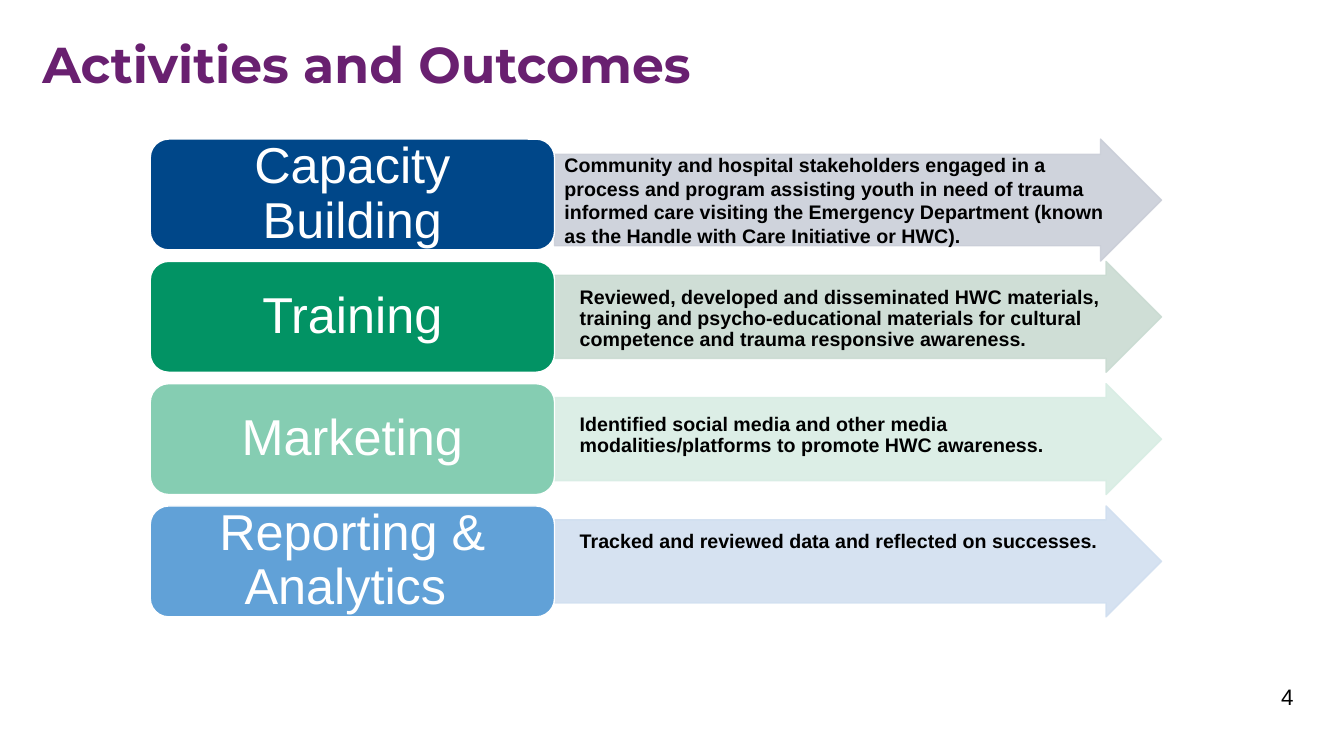
from dataclasses import dataclass

from lxml.etree import SubElement
from pptx import Presentation
from pptx.dml.color import RGBColor
from pptx.enum.shapes import MSO_SHAPE
from pptx.enum.text import MSO_ANCHOR, MSO_AUTO_SIZE, PP_ALIGN
from pptx.oxml import parse_xml
from pptx.oxml.ns import nsdecls, qn
from pptx.util import Pt

TITLE = "Activities and Outcomes"
PAGE_NUMBER = "4"

# activity, outcome, activity colour, outcome colour
ACTIVITIES = [
    ("Capacity Building",
     "Community and hospital stakeholders engaged in a process and program "
     "assisting youth in need of trauma informed care visiting the Emergency "
     "Department (known as the Handle with Care Initiative or HWC).",
     "004789", "CACED8"),
    ("Training",
     "Reviewed, developed and disseminated HWC materials, training and "
     "psycho-educational materials for cultural competence and trauma "
     "responsive awareness.",
     "029364", "CADBD2"),
    ("Marketing",
     "Identified social media and other media modalities/platforms to promote "
     "HWC awareness.",
     "85CDB2", "D8EDE4"),
    ("Reporting & Analytics ",
     "Tracked and reviewed data and reflected on successes.",
     "61A1D7", "D1DFF0"),
]

# arrow height, (left, top, right, bottom) margins, anchor, line spacing
ARROW_LAYOUT = [
    (121, (10, 10, 10, 10), MSO_ANCHOR.MIDDLE, 1.0),
    (110, (25, 12, 0, 0), MSO_ANCHOR.TOP, 0.9),
    (110, (25, 17, 0, 0), MSO_ANCHOR.TOP, 0.9),
    (110, (25, 12, 0, 0), MSO_ANCHOR.TOP, 0.9),
]


@dataclass(frozen=True)
class Theme:
    heading_font: str = "Montserrat"
    body_font: str = "Arial"
    purple: str = "692070"
    white: str = "FFFFFF"
    black: str = "000000"
    large: int = 36
    number: int = 16
    small: int = 14
    arrow_opacity: int = 89


THEME = Theme()
EMU_PER_PX = 9144  # 100 px to the inch

SLIDE_W, SLIDE_H = 1333, 750
FIRST_TOP, LAST_TOP = 138, 502
CARD_LEFT, CARD_W, CARD_H = 149, 401, 110
ARROW_LEFT, ARROW_W = CARD_LEFT + CARD_W, 602
ROW_PITCH = (LAST_TOP - FIRST_TOP) / (len(ACTIVITIES) - 1)


def px(length):
    return round(length * EMU_PER_PX)


def box(*lengths):
    return [px(length) for length in lengths]


def set_text(shape, text, margins, anchor, align, size, color,
             bold=False, spacing=1.0, font=THEME.body_font):
    frame = shape.text_frame
    frame.word_wrap = True
    frame.auto_size = MSO_AUTO_SIZE.NONE
    frame.vertical_anchor = anchor
    (frame.margin_left, frame.margin_top,
     frame.margin_right, frame.margin_bottom) = box(*margins)
    frame.text = text
    paragraph = frame.paragraphs[0]
    paragraph.alignment = align
    paragraph.line_spacing = spacing
    paragraph.font.name = font
    paragraph.font.size = Pt(size)
    paragraph.font.bold = bold
    paragraph.font.color.rgb = RGBColor.from_string(color)
    return paragraph


def add_block(slide, preset, place, fill, line):
    block = slide.shapes.add_shape(preset, *box(*place))
    block.shadow.inherit = False
    block.fill.solid()
    block.fill.fore_color.rgb = RGBColor.from_string(fill)
    block.line.color.rgb = RGBColor.from_string(line)
    block.line.width = Pt(1)
    return block


def set_opacity(shape, percent):
    """Make both the fill and the outline of a shape see-through."""
    for color in shape.element.spPr.iter(qn("a:srgbClr")):
        SubElement(color, qn("a:alpha"), val=str(percent * 1000))


def add_row(slide, top, activity, arrow_layout):
    name, outcome, card_color, arrow_color = activity
    height, margins, anchor, spacing = arrow_layout

    arrow = add_block(slide, MSO_SHAPE.RIGHT_ARROW,
                      (ARROW_LEFT, top, ARROW_W, height),
                      arrow_color, arrow_color)
    arrow.adjustments[0] = 0.75
    set_opacity(arrow, THEME.arrow_opacity)
    set_text(arrow, outcome, margins, anchor, PP_ALIGN.LEFT, THEME.small,
             THEME.black, bold=True, spacing=spacing)

    card = add_block(slide, MSO_SHAPE.ROUNDED_RECTANGLE,
                     (CARD_LEFT, top, CARD_W, CARD_H),
                     card_color, THEME.white)
    set_text(card, name, (22, 11, 22, 11), MSO_ANCHOR.MIDDLE, PP_ALIGN.CENTER,
             THEME.large, THEME.white, spacing=0.9)


def add_page_number(slide):
    number = slide.shapes.add_textbox(*box(983, 673, 300, 40))
    paragraph = set_text(number, "", (10, 5, 0, 5), MSO_ANCHOR.TOP,
                         PP_ALIGN.RIGHT, THEME.number, THEME.black)
    paragraph._p.append(parse_xml(
        f'<a:fld {nsdecls("a")} type="slidenum" '
        'id="{B6F15528-21DE-4FAA-801E-634DDDAF4B2B}">'
        f'<a:rPr lang="en-US"/><a:t>{PAGE_NUMBER}</a:t></a:fld>'))


def main():
    deck = Presentation()
    deck.slide_width, deck.slide_height = box(SLIDE_W, SLIDE_H)
    # The page number field shows the slide's place in the full deck.
    deck.element.set("firstSlideNum", PAGE_NUMBER)
    slide = deck.slides.add_slide(deck.slide_layouts.get_by_name("Title Only"))

    title = slide.shapes.title
    title.left, title.top, title.width, title.height = box(42, 40, 1233, 82)
    set_text(title, TITLE, (0, 0, 0, 5), MSO_ANCHOR.TOP, PP_ALIGN.LEFT,
             THEME.large, THEME.purple, bold=True, spacing=0.9,
             font=THEME.heading_font)

    for row, (activity, layout) in enumerate(zip(ACTIVITIES, ARROW_LAYOUT)):
        add_row(slide, FIRST_TOP + row * ROW_PITCH, activity, layout)
    add_page_number(slide)
    deck.save("out.pptx")


if __name__ == "__main__":
    main()
